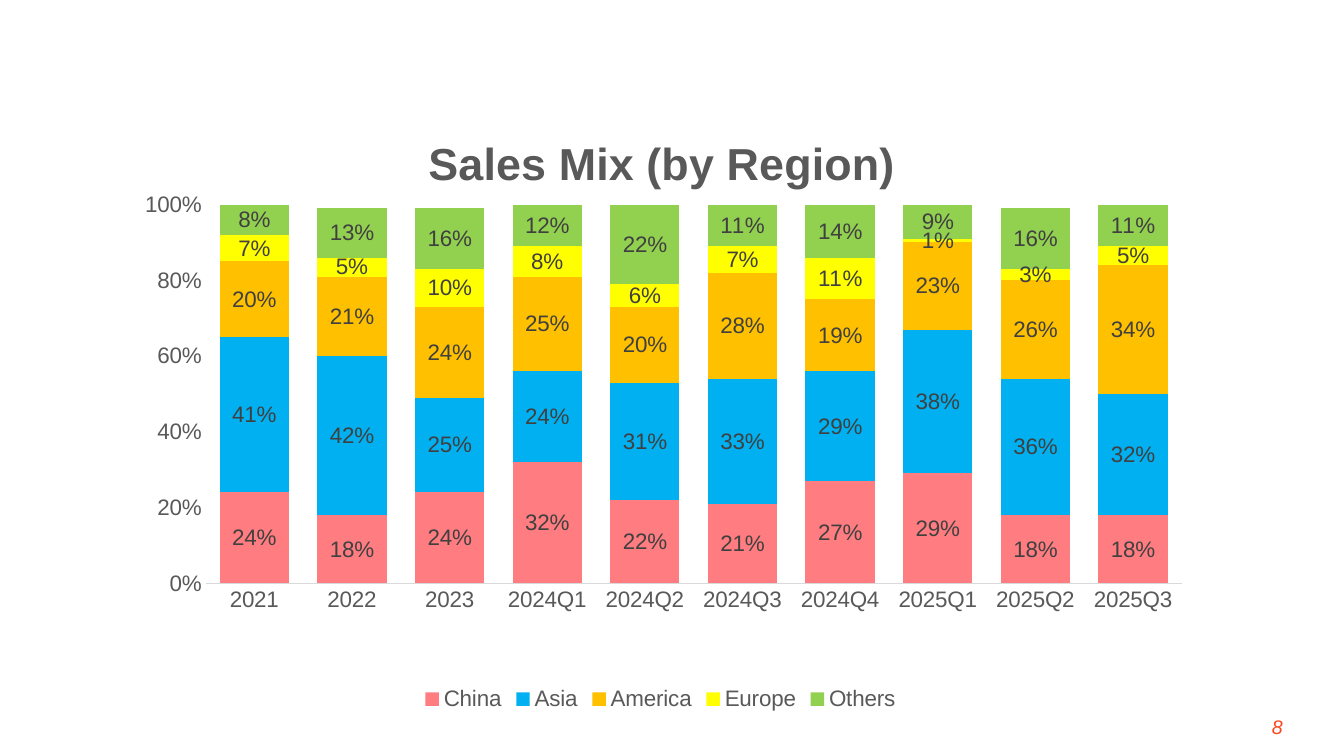
import pptx
import pptx.chart.data
import pptx.dml.color
import pptx.enum.chart
import pptx.enum.text
import pptx.oxml
import pptx.oxml.ns
import pptx.util
from pptx.dml.color import RGBColor
from pptx.util import Inches, Pt

# Content
TITLE = "Sales Mix (by Region)"
PAGE_NUMBER = "8"
PERIODS = ["2021", "2022", "2023", "2024Q1", "2024Q2", "2024Q3",
           "2024Q4", "2025Q1", "2025Q2", "2025Q3"]
REGIONS = [
    ("China", RGBColor(0xFF, 0x7C, 0x80),
     (0.24, 0.18, 0.24, 0.32, 0.22, 0.21, 0.27, 0.29, 0.18, 0.18)),
    ("Asia", RGBColor(0x00, 0xB0, 0xF0),
     (0.41, 0.42, 0.25, 0.24, 0.31, 0.33, 0.29, 0.38, 0.36, 0.32)),
    ("America", RGBColor(0xFF, 0xC0, 0x00),
     (0.20, 0.21, 0.24, 0.25, 0.20, 0.28, 0.19, 0.23, 0.26, 0.34)),
    ("Europe", RGBColor(0xFF, 0xFF, 0x00),
     (0.07, 0.05, 0.10, 0.08, 0.06, 0.07, 0.11, 0.01, 0.03, 0.05)),
    ("Others", RGBColor(0x92, 0xD0, 0x50),
     (0.08, 0.13, 0.16, 0.12, 0.22, 0.11, 0.14, 0.09, 0.16, 0.11)),
]

# Style
FONT = "Arial"
GRAY = RGBColor(0x59, 0x59, 0x59)
LABEL_GRAY = RGBColor(0x40, 0x40, 0x40)
AXIS_GRAY = RGBColor(0xD9, 0xD9, 0xD9)
ORANGE = RGBColor(0xFA, 0x46, 0x1E)
PERCENT = "0%"


def set_font(font, size, color, bold=False, italic=False):
    font.name = FONT
    font.size = Pt(size)
    font.color.rgb = color
    font.bold = bold
    font.italic = italic


def manual_layout(target, **positions):
    """Put a chart part at fractions of the chart area."""
    inner = '<c:layoutTarget val="inner"/>' if "w" in positions else ""
    modes = "".join(f'<c:{axis}Mode val="edge"/>' for axis in "xy")
    values = "".join(f'<c:{key} val="{value}"/>' for key, value in positions.items())
    layout = pptx.oxml.parse_xml(
        f'<c:layout {pptx.oxml.ns.nsdecls("c")}><c:manualLayout>'
        f"{inner}{modes}{values}</c:manualLayout></c:layout>")
    for old in target.findall(pptx.oxml.ns.qn("c:layout")):
        target.remove(old)
    text = target.find(pptx.oxml.ns.qn("c:tx"))
    target.insert(0 if text is None else target.index(text) + 1, layout)


def add_sales_chart(slide):
    data = pptx.chart.data.CategoryChartData(number_format=PERCENT)
    data.categories = PERIODS
    for name, _, values in REGIONS:
        data.add_series(name, values)
    chart = slide.shapes.add_chart(
        pptx.enum.chart.XL_CHART_TYPE.COLUMN_STACKED,
        Inches(1.14), Inches(0.94), Inches(10.82), Inches(6.16), data).chart
    set_font(chart.font, 16, GRAY)

    # Title
    chart.has_title = True
    title_run = chart.chart_title.text_frame.paragraphs[0].add_run()
    title_run.text = TITLE
    set_font(title_run.font, 32, GRAY, bold=True)
    chart.chart_title.include_in_layout = False
    title = chart.chart_title._element
    manual_layout(title, x=0.28, y=0.05)

    # Legend
    chart.has_legend = True
    chart.legend.position = pptx.enum.chart.XL_LEGEND_POSITION.BOTTOM
    chart.legend.include_in_layout = False
    set_font(chart.legend.font, 16, GRAY)

    # Axes
    for axis in (chart.category_axis, chart.value_axis):
        axis.major_tick_mark = pptx.enum.chart.XL_TICK_MARK.NONE
        axis.minor_tick_mark = pptx.enum.chart.XL_TICK_MARK.NONE
        axis.has_major_gridlines = False
        set_font(axis.tick_labels.font, 16, GRAY)
    chart.category_axis.format.line.color.rgb = AXIS_GRAY
    chart.category_axis.format.line.width = Pt(0.75)
    value_axis = chart.value_axis
    value_axis.format.line.fill.background()
    value_axis.minimum_scale = 0
    value_axis.maximum_scale = 1
    value_axis.major_unit = 0.2
    value_axis.tick_labels.number_format = PERCENT
    value_axis.tick_labels.number_format_is_linked = False

    # Columns and their labels
    plot = chart.plots[0]
    plot.gap_width = 41
    plot.overlap = 100
    plot.vary_by_categories = False
    for series, (_, color, _) in zip(plot.series, REGIONS):
        series.format.fill.solid()
        series.format.fill.fore_color.rgb = color
        labels = series.data_labels
        labels.show_value = True
        labels.position = pptx.enum.chart.XL_LABEL_POSITION.CENTER
        labels.number_format = PERCENT
        labels.number_format_is_linked = False
        set_font(labels.font, 16, LABEL_GRAY)
    plot_area = chart._chartSpace.chart.plotArea
    manual_layout(plot_area, x=0.083, y=0.177, w=0.895, h=0.61)


def add_page_number(slide):
    box = slide.shapes.add_textbox(Inches(12.07), Inches(7.01), Inches(0.75), Inches(0.4))
    frame = box.text_frame
    frame.word_wrap = True
    frame.vertical_anchor = pptx.enum.text.MSO_ANCHOR.MIDDLE
    paragraph = frame.paragraphs[0]
    paragraph.alignment = pptx.enum.text.PP_ALIGN.RIGHT
    run = paragraph.add_run()
    run.text = PAGE_NUMBER
    set_font(run.font, 14, ORANGE, italic=True)


def main():
    presentation = pptx.Presentation()
    presentation.slide_width = Inches(13.33)
    presentation.slide_height = Inches(7.5)
    slide = presentation.slides.add_slide(presentation.slide_layouts[6])
    add_page_number(slide)
    add_sales_chart(slide)
    presentation.save("out.pptx")


if __name__ == "__main__":
    main()
